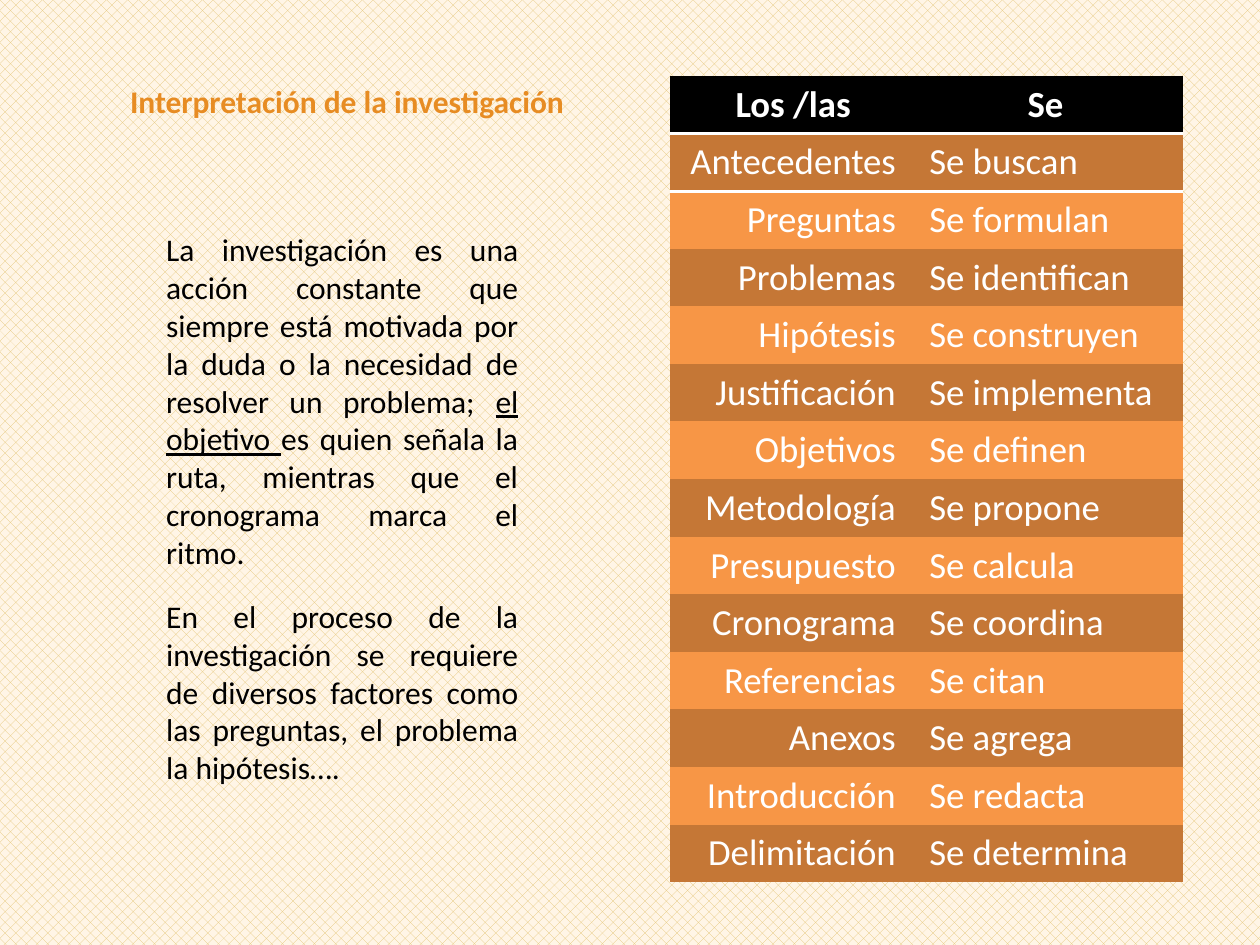
from lxml import etree
from pptx import Presentation
from pptx.dml.color import RGBColor as RGB
from pptx.enum.dml import MSO_PATTERN as PATTERN
from pptx.enum.text import PP_ALIGN as ALIGN
from pptx.oxml.ns import qn
from pptx.util import Cm, Pt

COLORS = {
    "weave": "E3C474",
    "paper": "FFF5E6",
    "title": "E78C23",
    "body": "000000",
    "header": "000000",
    "dark": "C57736",
    "light": "F79646",
    "white": "FFFFFF",
}
PLAIN_TABLE = "{2D5ABB26-0587-4C30-8999-92F81FD0307C}"


def write(frame, *pieces, size=18, color="body", bold=False, align=ALIGN.LEFT, underlined=None):
    """Write the pieces as runs of one paragraph."""
    frame.word_wrap = True
    paragraph = frame.paragraphs[0]
    paragraph.alignment = align
    for piece in pieces:
        run = paragraph.add_run()
        run.text = piece
        run.font.name = "Calibri"
        run.font.size = Pt(size)
        run.font.bold = bold
        run.font.underline = piece == underlined
        run.font.color.rgb = RGB.from_string(COLORS[color])


def add_rule(cell, side):
    """Draw a white 2 pt border on one side of a cell."""
    rule = etree.Element(qn(f"a:{side}"), w=str(Pt(2)))
    fill = etree.SubElement(rule, qn("a:solidFill"))
    etree.SubElement(fill, qn("a:srgbClr"), val=COLORS["white"])
    cell._tc.get_or_add_tcPr().insert(0, rule)


deck = Presentation()
deck.slide_width, deck.slide_height = Cm(25.4), Cm(19.05)
slide = deck.slides.add_slide(deck.slide_layouts[6])

# Woven background
weave = slide.background.fill
weave.patterned()
weave.pattern = PATTERN.WEAVE
weave.fore_color.rgb = RGB.from_string(COLORS["weave"])
weave.back_color.rgb = RGB.from_string(COLORS["paper"])

# Table of research parts and what is done with each
parts = [
    ("Los /las", "Se "),
    ("Antecedentes ", "Se buscan"),
    ("Preguntas ", "Se formulan"),
    ("Problemas ", "Se identifican"),
    ("Hipótesis ", "Se construyen"),
    ("Justificación ", "Se implementa"),
    ("Objetivos ", "Se definen"),
    ("Metodología ", "Se propone"),
    ("Presupuesto ", "Se calcula"),
    ("Cronograma ", "Se coordina"),
    ("Referencias ", "Se citan"),
    ("Anexos ", "Se agrega"),
    ("Introducción ", "Se redacta"),
    ("Delimitación ", "Se determina"),
]
row_height = Cm(1.04)
actions = slide.shapes.add_table(
    len(parts), 2, Cm(13.5), Cm(1.53), Cm(10.34), row_height * len(parts)
).table
actions._tbl.tblPr.find(qn("a:tableStyleId")).text = PLAIN_TABLE
actions.horz_banding = False
actions.columns[0].width, actions.columns[1].width = Cm(4.98), Cm(5.36)

for r, part in enumerate(parts):
    actions.rows[r].height = row_height
    band = "header" if r == 0 else "dark" if r % 2 else "light"
    for c, words in enumerate(part):
        cell = actions.cell(r, c)
        cell.fill.solid()
        cell.fill.fore_color.rgb = RGB.from_string(COLORS[band])
        align = ALIGN.CENTER if r == 0 else (ALIGN.RIGHT, ALIGN.LEFT)[c]
        write(cell.text_frame, words, size=21, color="white", bold=r == 0, align=align)
        if r < 2:
            add_rule(cell, ("lnB", "lnT")[r])

# Title
title = slide.shapes.add_textbox(Cm(1.5), Cm(1.53), Cm(11), Cm(1.8))
write(title.text_frame, "Interpretación de la investigación",
      color="title", bold=True, align=ALIGN.CENTER)

# Explanation, two justified blocks
explanation = [
    (4.52, 7.19, [
        "La investigación es una acción constante que siempre está motivada por "
        "la duda o la necesidad de resolver un problema; ",
        "el objetivo ",
        "es quien señala la ruta, mientras que el cronograma marca el ritmo.",
    ]),
    (11.91, 4.88, [
        "En el proceso de la investigación se requiere de diversos factores como "
        "las preguntas, el problema la hipótesis….",
    ]),
]
for top, height, pieces in explanation:
    block = slide.shapes.add_textbox(Cm(3.1), Cm(top), Cm(7.6), Cm(height))
    write(block.text_frame, *pieces, align=ALIGN.JUSTIFY, underlined="el objetivo ")

deck.save("out.pptx")
